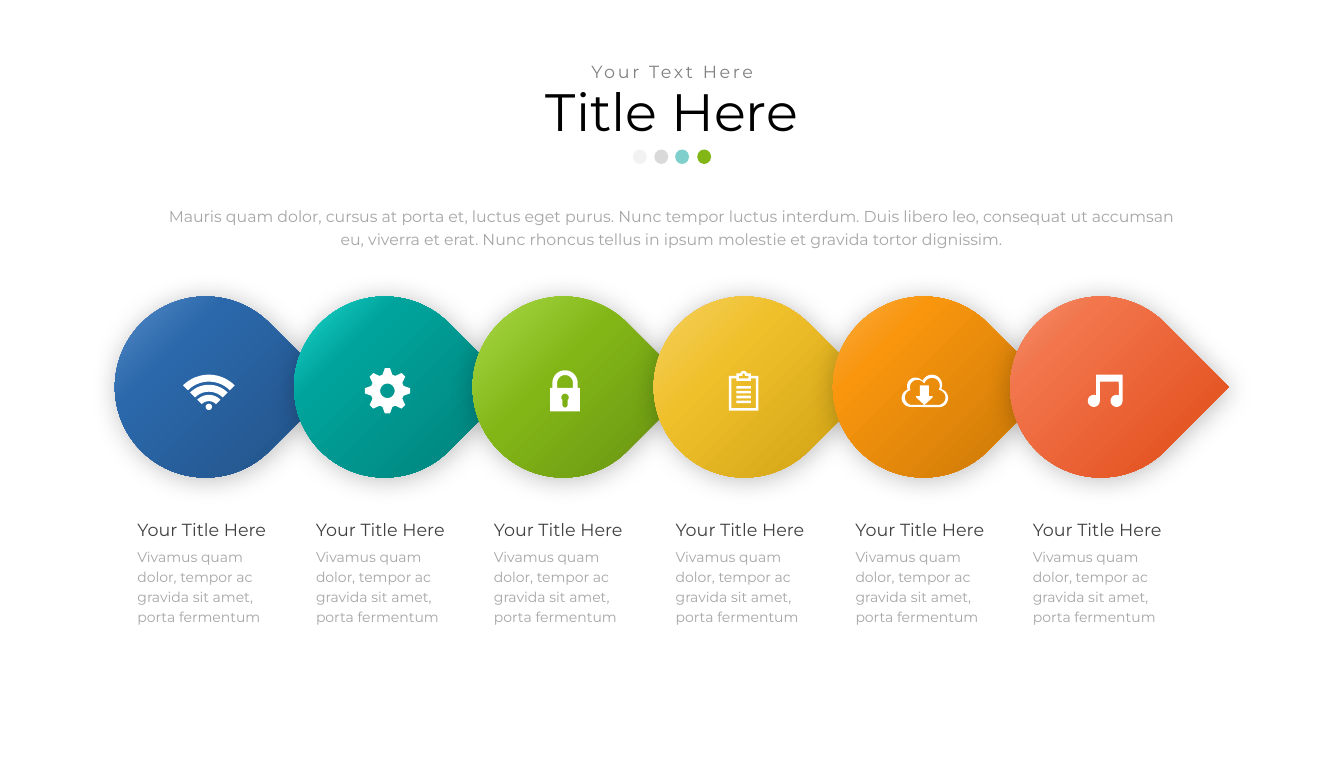
"""Build a six-step teardrop process slide with icons and captions."""
from copy import deepcopy
from math import cos, radians, sin

from lxml.etree import SubElement
from pptx import Presentation
from pptx.dml.color import RGBColor
from pptx.enum.shapes import MSO_SHAPE
from pptx.enum.text import MSO_AUTO_SIZE, PP_ALIGN
from pptx.oxml.ns import qn
from pptx.util import Inches, Pt

FONT = "Montserrat"
BLACK = RGBColor(0x00, 0x00, 0x00)
DARK = RGBColor(0x40, 0x40, 0x40)
GRAY = RGBColor(0x80, 0x80, 0x80)
LIGHT = RGBColor(0xA6, 0xA6, 0xA6)
WHITE = RGBColor(0xFF, 0xFF, 0xFF)
PALE = RGBColor(0xF2, 0xF2, 0xF2)
SILVER = RGBColor(0xD9, 0xD9, 0xD9)
TEAL = RGBColor(0x00, 0xA3, 0x9B)
GREEN = RGBColor(0x82, 0xB6, 0x17)

TITLE = "Title Here"
SUBTITLE = "Your Text Here"
INTRO = ("Mauris quam dolor, cursus at porta et, luctus eget purus. Nunc tempor luctus interdum. "
         "Duis libero leo, consequat ut accumsan eu, viverra et erat. Nunc rhoncus tellus in ipsum "
         "molestie et gravida tortor dignissim.")
STEP_TITLE = "Your Title Here"
STEP_TEXT = "Vivamus quam dolor, tempor ac gravida sit amet, porta fermentum"

DOTS = [(10.03, PALE, 100), (10.37, SILVER, 98), (10.7, TEAL, 50), (11.05, GREEN, 100)]
STEPS = [
    (1.82, 2.08, 37, (RGBColor(0x71, 0xA4, 0xDB), RGBColor(0x2B, 0x68, 0xAB), RGBColor(0x20, 0x4E, 0x80))),
    (4.66, 4.91, 36, (RGBColor(0x2F, 0xFF, 0xF5), TEAL, RGBColor(0x00, 0x7A, 0x74))),
    (7.49, 7.73, 46, (RGBColor(0xBC, 0xEA, 0x5D), GREEN, RGBColor(0x62, 0x89, 0x11))),
    (10.36, 10.61, 41, (RGBColor(0xF6, 0xD9, 0x80), RGBColor(0xF0, 0xC0, 0x2B), RGBColor(0xC6, 0x99, 0x0E))),
    (13.2, 13.46, 34, (RGBColor(0xFB, 0xC0, 0x6E), RGBColor(0xF9, 0x96, 0x0E), RGBColor(0xC0, 0x71, 0x05))),
    (16.01, 16.27, 33, (RGBColor(0xF7, 0xAC, 0x93), RGBColor(0xF2, 0x75, 0x4B), RGBColor(0xDE, 0x44, 0x10))),
]


def arc(cx, cy, radius, start=0, end=360, steps=24):
    angles = [radians(start + (end - start) * i / steps) for i in range(steps + 1)]
    return [(cx + radius * cos(a), cy + radius * sin(a)) for a in angles]


def rect(left, top, right, bottom):
    return [(left, top), (right, top), (right, bottom), (left, bottom)]


def wifi():
    cx, cy = 3.31, 6.52
    bands = [(0.58, 0.47), (0.42, 0.31), (0.26, 0.16)]
    return [arc(cx, cy, outer, -135, -45) + arc(cx, cy, inner, -45, -135)
            for outer, inner in bands] + [arc(cx, 6.45, 0.05)]


def gear():
    cx, cy = 6.14, 6.195
    tooth = [(0.267, -17), (0.36, -6.5), (0.36, 6.5), (0.267, 17)]
    teeth = [(cx + r * cos(radians(45 * k + a)), cy + r * sin(radians(45 * k + a)))
             for k in range(8) for r, a in tooth]
    return [teeth, arc(cx, cy, 0.115)]


def lock():
    cx, cy = 8.955, 6.07
    body = [(8.72, 6.52), (8.72, 6.15), (8.755, 6.15)] + arc(cx, cy, 0.2, 180, 360)
    body += [(9.155, 6.15), (9.19, 6.15), (9.19, 6.52)]
    shackle = [(8.83, 6.15)] + arc(cx, cy, 0.125, 180, 360) + [(9.08, 6.15)]
    keyhole = arc(cx, 6.3, 0.06, 135, 405) + arc(cx, 6.42, 0.04, 0, 180)
    return [body, shackle, keyhole]


def clipboard():
    cx = 11.785
    board = [(11.55, 6.51), (11.55, 5.96), (11.67, 5.96), (11.67, 5.92), (11.73, 5.92)]
    board += arc(cx, 5.935, 0.055, 195, 345)
    board += [(11.84, 5.92), (11.9, 5.92), (11.9, 5.96), (12.02, 5.96), (12.02, 6.51)]
    page = [(11.59, 6), (11.67, 6), (11.67, 6.04), (11.9, 6.04), (11.9, 6),
            (11.98, 6), (11.98, 6.47), (11.59, 6.47)]
    clip = [(11.71, 6), (11.71, 5.96), (11.765, 5.96)] + arc(cx, 5.94, 0.02, 180, 360)
    clip += [(11.805, 5.96), (11.86, 5.96), (11.86, 6)]
    tops = [6.12 + 0.077 * i for i in range(4)]
    return [board, page, clip] + [rect(11.67, top, 11.9, top + 0.04) for top in tops]


def cloud():
    outer = (arc(14.43, 6.31, 0.14, 90, 250) + arc(14.51, 6.12, 0.135, 165, 318)
             + arc(14.77, 6.1, 0.16, 205, 382) + arc(14.88, 6.31, 0.145, 290, 450))
    inner = (arc(14.46, 6.3, 0.12, 90, 255) + arc(14.54, 6.14, 0.12, 160, 325)
             + arc(14.77, 6.115, 0.125, 200, 390) + arc(14.865, 6.3, 0.12, 285, 450))
    arrow = [(14.58, 6.11), (14.72, 6.11), (14.72, 6.28), (14.78, 6.28), (14.78, 6.3),
             (14.65, 6.42), (14.52, 6.3), (14.52, 6.28), (14.58, 6.28)]
    return [outer, inner, arrow]


def music():
    radius, cy = 0.095, 6.355
    notes = [(17.37, 5.94), (17.79, 5.94)] + arc(17.695, cy, radius, 0, 293)
    notes += [(17.73, 6.05), (17.43, 6.05)] + arc(17.335, cy, radius, 0, 293)
    return [notes]


def add_text(slide, box, text, size, color, spacing, align=PP_ALIGN.LEFT, grow=True):
    tf = slide.shapes.add_textbox(*map(Inches, box)).text_frame
    tf.word_wrap = True
    tf.auto_size = MSO_AUTO_SIZE.SHAPE_TO_FIT_TEXT if grow else MSO_AUTO_SIZE.NONE
    p = tf.paragraphs[0]
    p.text = text
    p.alignment = align
    p.line_spacing = spacing
    p.font.name = FONT
    p.font.size = Pt(size)
    p.font.color.rgb = color
    return p


def add_dot(slide, left, color, opacity):
    sp = slide.shapes.add_shape(MSO_SHAPE.OVAL, *map(Inches, (left, 2.37, 0.22, 0.23)))
    sp.shadow.inherit = False
    sp.fill.solid()
    sp.fill.fore_color.rgb = color
    sp.line.fill.background()
    if opacity < 100:
        rgb = sp._element.spPr.find(qn("a:solidFill"))[0]
        SubElement(rgb, qn("a:alpha"), val=str(opacity * 1000))


def add_teardrop(slide, left, middle, colors):
    sp = slide.shapes.add_shape(MSO_SHAPE.TEAR, *map(Inches, (left, 4.7, 2.87, 2.87)))
    sp.rotation = 45
    sp.line.fill.background()
    sp.fill.gradient()
    sp.fill.gradient_angle = 0
    stops = sp._element.spPr.find(qn("a:gradFill")).find(qn("a:gsLst"))
    stops.append(deepcopy(stops[0]))
    for stop, position, color in zip(sp.fill.gradient_stops, (0, middle, 100), colors):
        stop.position = position / 100
        stop.color.rgb = color
    sp.shadow.inherit = False
    effects = sp._element.spPr.find(qn("a:effectLst"))
    shadow = SubElement(effects, qn("a:outerShdw"), blurRad=str(Pt(31)), dist=str(Pt(3)),
                        dir=str(55 * 60000), algn="ctr", rotWithShape="0")
    rgb = SubElement(shadow, qn("a:srgbClr"), val=str(BLACK))
    SubElement(rgb, qn("a:alpha"), val="26000")


def add_icon(slide, contours):
    contours = [[(x * 1000, y * 1000) for x, y in contour] for contour in contours]
    builder = slide.shapes.build_freeform(*contours[0][0], scale=Inches(1) / 1000)
    for contour in contours:
        builder.move_to(*contour[0])
        builder.add_line_segments(contour[1:], close=True)
    sp = builder.convert_to_shape()
    sp.shadow.inherit = False
    sp.fill.solid()
    sp.fill.fore_color.rgb = WHITE
    sp.line.fill.background()


def main():
    prs = Presentation()
    prs.slide_width, prs.slide_height = Inches(21.3), Inches(12)
    slide = prs.slides.add_slide(prs.slide_layouts[6])

    add_text(slide, (1.02, 1.31, 19.26, 1.03), TITLE, 60, BLACK, 0.9, PP_ALIGN.CENTER, False)
    p = add_text(slide, (7.48, 0.95, 6.35, 0.35), SUBTITLE, 20, GRAY, 0.9, PP_ALIGN.CENTER, False)
    p.space_before = Pt(16)
    p.runs[0].font._element.set("spc", "300")
    for dot in DOTS:
        add_dot(slide, *dot)
    add_text(slide, (2.52, 3.17, 16.25, 0.83), INTRO, 18, LIGHT, 1.2, PP_ALIGN.CENTER)

    for left, text_left, middle, colors in STEPS:
        add_text(slide, (text_left, 8.11, 2.36, 0.51), STEP_TITLE, 20, DARK, 1.2)
        add_text(slide, (text_left, 8.59, 2.32, 1.39), STEP_TEXT, 16, LIGHT, 1.2)
        add_teardrop(slide, left, middle, colors)
    for icon in (wifi, gear, lock, clipboard, cloud, music):
        add_icon(slide, icon())
    prs.save("out.pptx")


if __name__ == "__main__":
    main()
